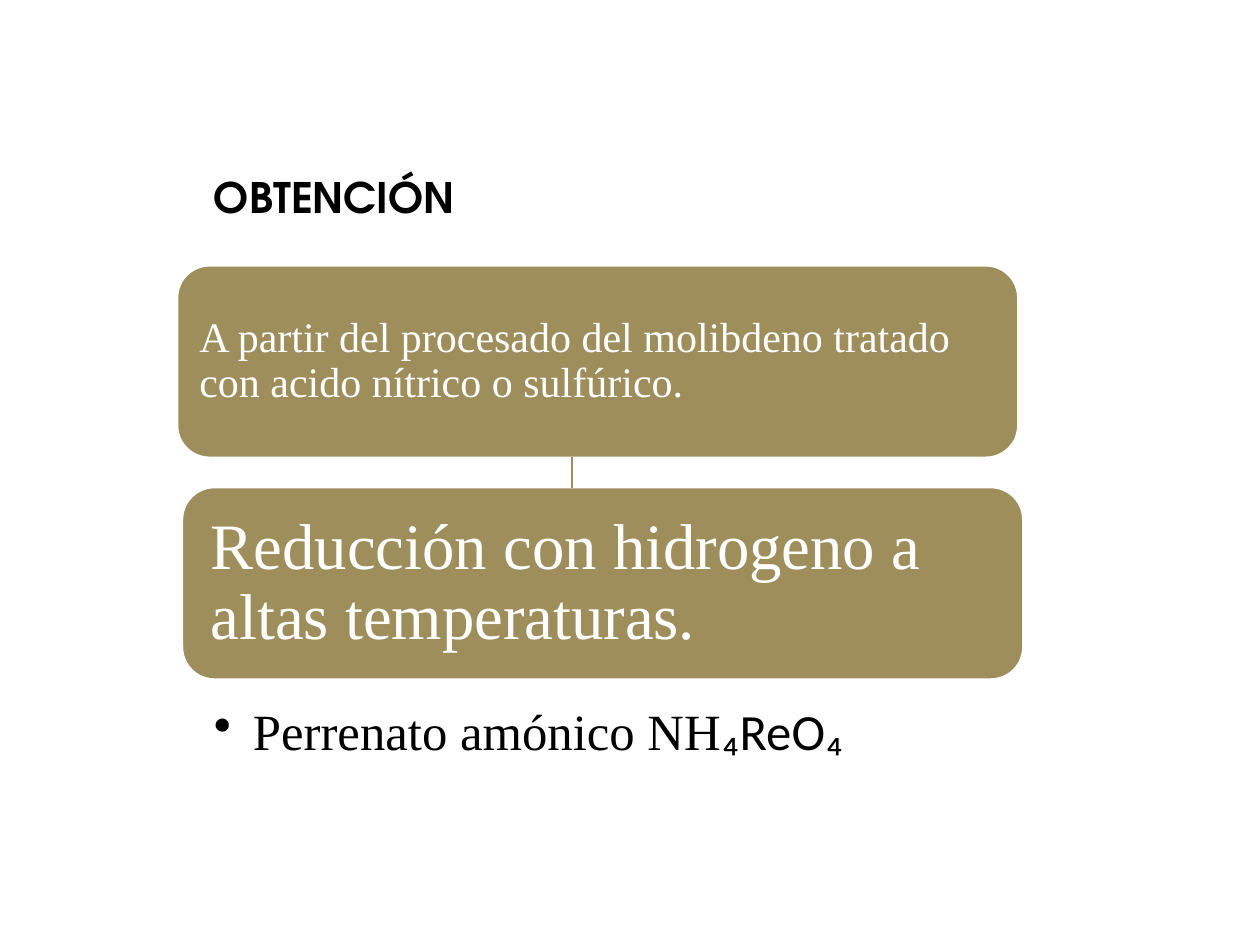
from dataclasses import dataclass

from lxml import etree
from pptx import Presentation
from pptx import util as u
from pptx.dml.color import RGBColor
from pptx.enum import shapes, text
from pptx.oxml.ns import qn


@dataclass(frozen=True)
class Theme:
    ink: RGBColor = RGBColor(0, 0, 0)
    paper: RGBColor = RGBColor(255, 255, 255)
    gold: RGBColor = RGBColor(0x9E, 0x8E, 0x5C)
    heading: str = "TeX Gyre Adventor"
    body: str = "Times New Roman"
    formula: str = "Calibri"
    title_size: int = 24
    source_size: int = 24
    reduction_size: int = 37
    product_size: int = 29


THEME = Theme()


def set_frame(tf, anchor, left, top, right, bottom, wrap=True):
    tf.word_wrap = wrap
    tf.auto_size = text.MSO_AUTO_SIZE.NONE
    tf.vertical_anchor = anchor
    tf.margin_left, tf.margin_top = u.Cm(left), u.Cm(top)
    tf.margin_right, tf.margin_bottom = u.Cm(right), u.Cm(bottom)


def style_run(r, font, size, color, bold=False):
    r.font.name = font
    r.font.size = u.Pt(size)
    r.font.bold = bold
    r.font.color.rgb = color


def place_title(s, x, y, w, h):
    sp = s.shapes.title
    sp.left, sp.top, sp.width, sp.height = map(u.Cm, (x, y, w, h))
    tf = sp.text_frame
    tf.text = "OBTENCIÓN"
    set_frame(tf, text.MSO_ANCHOR.TOP, 0.25, 0.13, 0.25, 0.13, wrap=False)
    p = tf.paragraphs[0]
    p.alignment = text.PP_ALIGN.LEFT
    p.line_spacing = 1.0
    p.space_before = u.Pt(0)
    style_run(p.runs[0], THEME.heading, THEME.title_size, THEME.ink, bold=True)


def add_step(s, x, y, w, h, words, size, inset):
    sp = s.shapes.add_shape(
        shapes.MSO_SHAPE.ROUNDED_RECTANGLE, *map(u.Cm, (x, y, w, h)))
    sp.shadow.inherit = False
    sp.fill.solid()
    sp.fill.fore_color.rgb = THEME.gold
    sp.line.color.rgb = THEME.paper
    sp.line.width = u.Pt(0.85)
    tf = sp.text_frame
    tf.text = words
    set_frame(tf, text.MSO_ANCHOR.MIDDLE, inset, inset, inset, inset)
    p = tf.paragraphs[0]
    p.alignment = text.PP_ALIGN.LEFT
    p.line_spacing = 0.9
    style_run(p.runs[0], THEME.body, size, THEME.paper)


def add_link(s, x, top, bottom):
    line = s.shapes.add_connector(
        shapes.MSO_CONNECTOR.STRAIGHT, *map(u.Cm, (x, top, x, bottom)))
    line.line.color.rgb = THEME.gold
    line.line.width = u.Pt(0.75)
    etree.SubElement(line._element.spPr, qn("a:effectLst"))


def add_product(s, x, y, w, h):
    sp = s.shapes.add_textbox(*map(u.Cm, (x, y, w, h)))
    tf = sp.text_frame
    set_frame(tf, text.MSO_ANCHOR.TOP, 0.53, 0.13, 0.74, 0.13)
    p = tf.paragraphs[0]
    p.line_spacing = 0.9
    indent = u.Cm(0.79)
    pPr = p._p.get_or_add_pPr()
    pPr.set("marL", str(indent))
    pPr.set("indent", str(-indent))
    etree.SubElement(pPr, qn("a:buChar")).set("char", "•")
    for words, font in (("Perrenato amónico NH", THEME.body),
                        ("₄ReO₄", THEME.formula)):
        r = p.add_run()
        r.text = words
        style_run(r, font, THEME.product_size, THEME.ink)


def main():
    prs = Presentation()
    prs.slide_width, prs.slide_height = u.Cm(25.4), u.Cm(19.05)
    s = prs.slides.add_slide(prs.slide_layouts[5])

    step_w, step_h = 16.94, 3.86
    source_y, reduction_y = 5.36, 9.83
    place_title(s, 4.06, 3.33, 5.41, 1.27)
    add_product(s, 3.78, 14.12, step_w, 1.7)
    add_step(s, 3.68, reduction_y, step_w, step_h,
             "Reducción con hidrogeno a altas temperaturas.",
             THEME.reduction_size, 0.38)
    add_step(s, 3.58, source_y, step_w, step_h,
             "A partir del procesado del molibdeno tratado con acido nítrico o sulfúrico.",
             THEME.source_size, 0.25)
    add_link(s, 11.53, source_y + step_h, reduction_y)
    prs.save("out.pptx")


if __name__ == "__main__":
    main()
